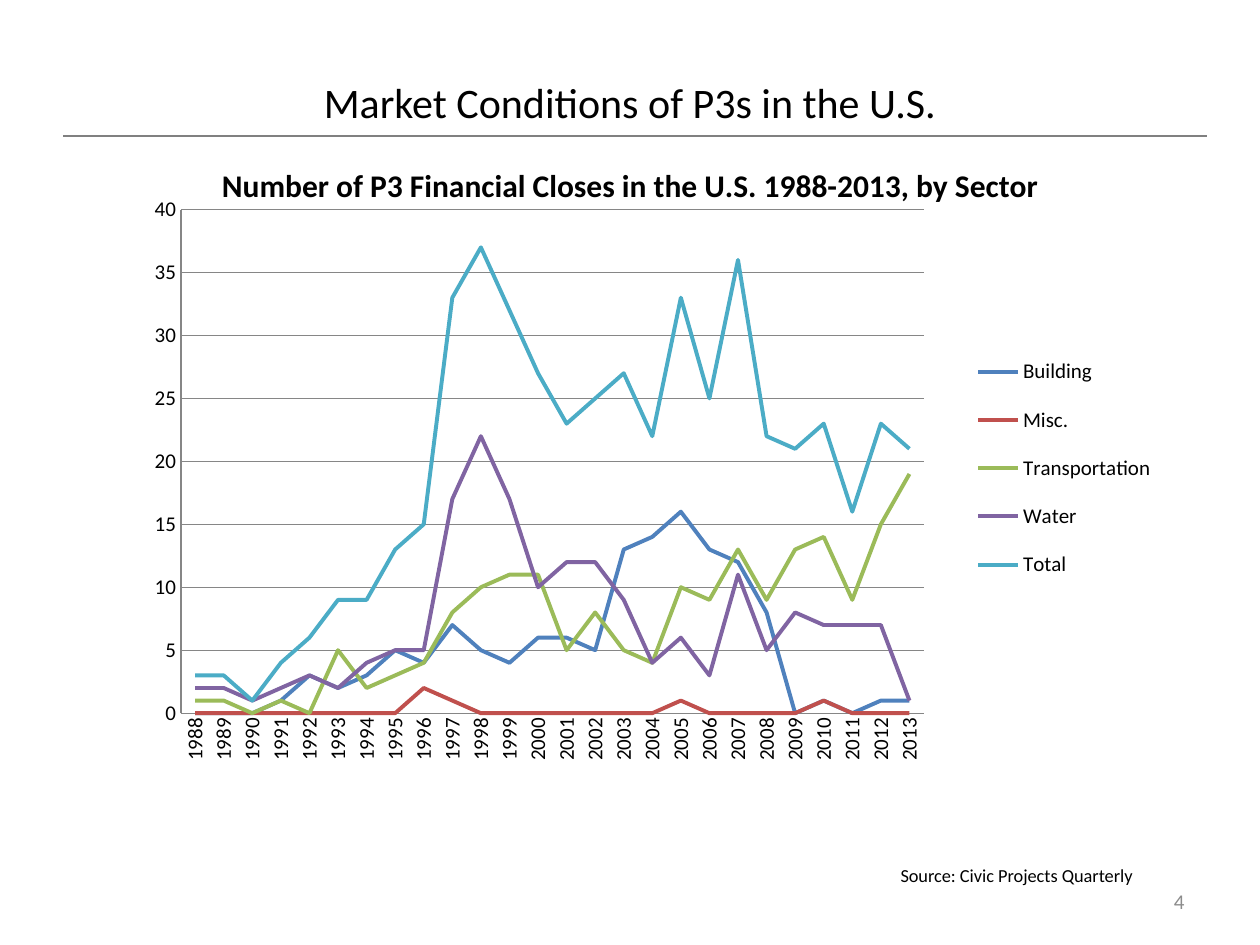
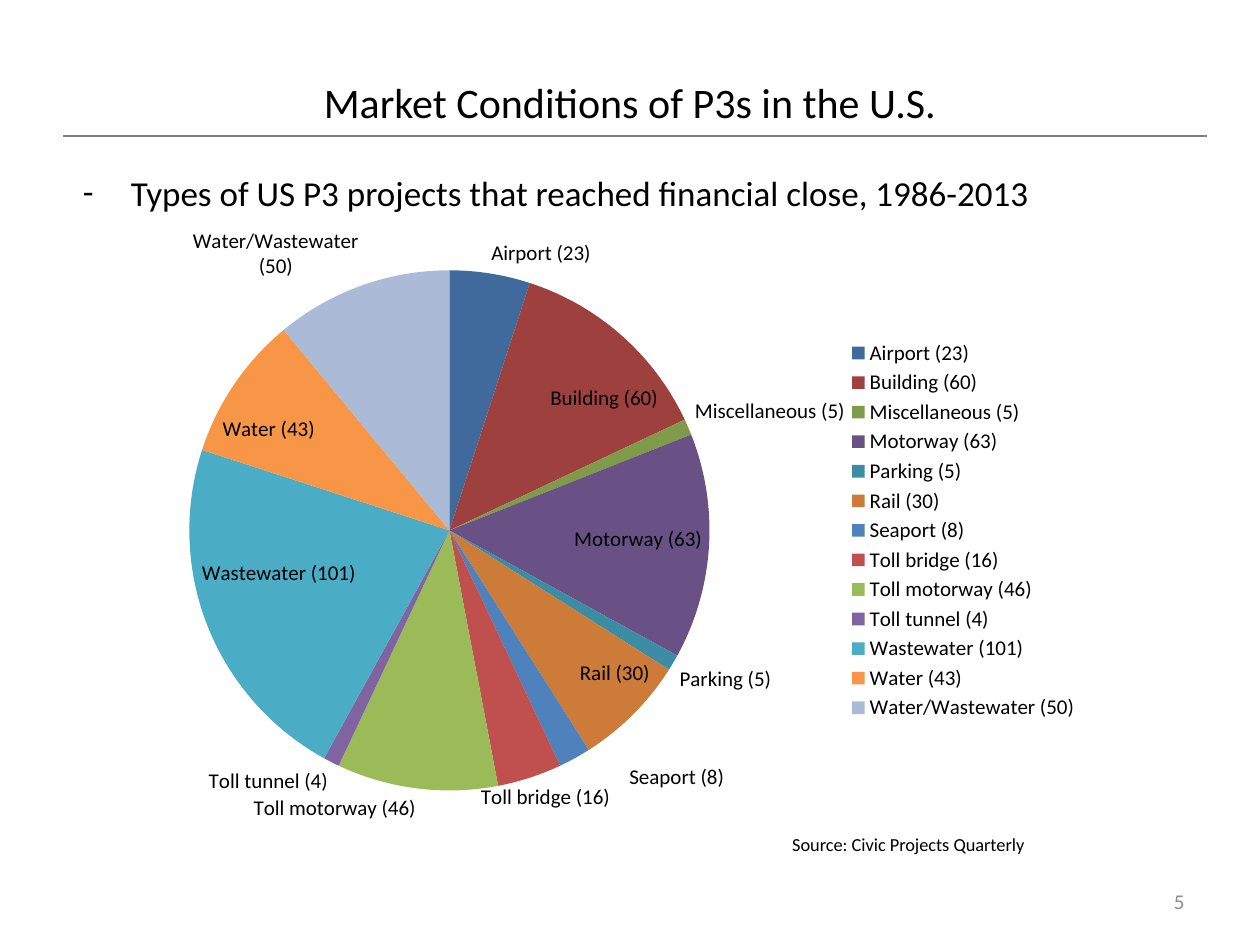
from lxml import etree
from pptx import Presentation
from pptx.chart.data import CategoryChartData as ChartData
from pptx.dml.color import RGBColor
from pptx.enum.chart import XL_CHART_TYPE as ChartType
from pptx.enum.chart import XL_LABEL_POSITION as LabelPos
from pptx.enum.chart import XL_LEGEND_POSITION as LegendPos
from pptx.enum.chart import XL_TICK_MARK as TickMark
from pptx.enum.shapes import MSO_CONNECTOR as Connector
from pptx.enum.text import MSO_ANCHOR as Anchor
from pptx.enum.text import PP_ALIGN as Align
from pptx.oxml.ns import qn
from pptx.util import Inches, Pt

COLORS = {
    "text": "000000", "rule": "808080", "number": "8C8C8C", "grid": "868686",
    "blue": "4F81BD", "red": "C0504D", "green": "9BBB59",
    "purple": "8064A2", "teal": "4BACC6", "orange": "F79646",
    "dark blue": "406A9C", "dark red": "9E413E", "dark green": "7F9A48",
    "dark purple": "695185", "dark teal": "3C8DA3", "dark orange": "CC7B38",
    "pale blue": "AABAD7",
}
BASE_COLORS = ["blue", "red", "green", "purple", "teal", "orange"]
SLICE_COLORS = [f"dark {name}" for name in BASE_COLORS] + BASE_COLORS + ["pale blue"]

TITLE = "Market Conditions of P3s in the U.S."
SOURCE = "Source: Civic Projects Quarterly"

YEARS = range(1988, 2014)
CLOSES = {
    "Building": [0, 0, 0, 1, 3, 2, 3, 5, 4, 7, 5, 4, 6,
                 6, 5, 13, 14, 16, 13, 12, 8, 0, 1, 0, 1, 1],
    "Misc.": [0, 0, 0, 0, 0, 0, 0, 0, 2, 1, 0, 0, 0,
              0, 0, 0, 0, 1, 0, 0, 0, 0, 1, 0, 0, 0],
    "Transportation": [1, 1, 0, 1, 0, 5, 2, 3, 4, 8, 10, 11, 11,
                       5, 8, 5, 4, 10, 9, 13, 9, 13, 14, 9, 15, 19],
    "Water": [2, 2, 1, 2, 3, 2, 4, 5, 5, 17, 22, 17, 10,
              12, 12, 9, 4, 6, 3, 11, 5, 8, 7, 7, 7, 1],
    "Total": [3, 3, 1, 4, 6, 9, 9, 13, 15, 33, 37, 32, 27,
              23, 25, 27, 22, 33, 25, 36, 22, 21, 23, 16, 23, 21],
}
PROJECTS = {
    "Airport": 23, "Building": 60, "Miscellaneous": 5, "Motorway": 63,
    "Parking": 5, "Rail": 30, "Seaport": 8, "Toll bridge": 16,
    "Toll motorway": 46, "Toll tunnel": 4, "Wastewater": 101, "Water": 43,
    "Water/Wastewater": 50,
}


def rgb(name):
    return RGBColor.from_string(COLORS[name])


def set_layout(element, index, inner=False, **fractions):
    """Give a chart part a manual layout in fractions of the chart."""
    for old in element.findall(qn("c:layout")):
        element.remove(old)
    layout = etree.Element(qn("c:layout"))
    manual = etree.SubElement(layout, qn("c:manualLayout"))
    settings = {"layoutTarget": "inner"} if inner else {}
    settings.update(xMode="edge", yMode="edge", **fractions)
    for tag, value in settings.items():
        etree.SubElement(manual, qn(f"c:{tag}")).set("val", str(value))
    element.insert(index, layout)


class DeckBuilder:
    """Holds the style and the current slide."""

    font = "Calibri"

    def __init__(self):
        self.deck = Presentation()
        self.deck.slide_width, self.deck.slide_height = Inches(10), Inches(7.5)
        self.page = None

    def format_font(self, font, size, color="text", bold=False):
        values = {"name": self.font, "size": Pt(size), "bold": bold}
        for name, value in values.items():
            setattr(font, name, value)
        font.color.rgb = rgb(color)

    def text(self, words, left, top, width, height, size, color="text",
             align=Align.LEFT, anchor=Anchor.TOP):
        box = self.page.shapes.add_textbox(
            Inches(left), Inches(top), Inches(width), Inches(height))
        frame = box.text_frame
        for name, value in {"word_wrap": True, "vertical_anchor": anchor}.items():
            setattr(frame, name, value)
        para = frame.paragraphs[0]
        para.alignment = align
        span = para.add_run()
        span.text = words
        self.format_font(span.font, size, color)
        return para

    def bullet(self, words, left, top, width, height):
        para = self.text(words, left, top, width, height, 20)
        para.space_before = Pt(4)
        props = para._p.get_or_add_pPr()
        props.set("marL", str(Inches(0.44)))
        props.set("indent", str(Inches(-0.38)))
        etree.SubElement(props, qn("a:buFont")).set("typeface", self.font)
        etree.SubElement(props, qn("a:buChar")).set("char", "-")

    def rule(self, left, top, right):
        line = self.page.shapes.add_connector(
            Connector.STRAIGHT, Inches(left), Inches(top), Inches(right), Inches(top))
        line.line.color.rgb = rgb("rule")
        line.line.width = Pt(1.25)
        etree.SubElement(line._element.spPr, qn("a:effectLst"))

    def new_page(self, number):
        """Add a slide with the shared title, rule and page number."""
        self.page = self.deck.slides.add_slide(self.deck.slide_layouts[6])
        self.text(TITLE, 0.5, 0.3, 9, 1.01, 24,
                  align=Align.CENTER, anchor=Anchor.MIDDLE)
        self.rule(0.5, 1.08, 9.58)
        self.text(str(number), 7.17, 6.95, 2.33, 0.4, 12, "number",
                  Align.RIGHT, Anchor.MIDDLE)

    def source(self, left, top, width):
        self.text(SOURCE, left, top, width, 0.28, 10.5, align=Align.RIGHT)

    def chart(self, kind, categories, series, at, plot, legend):
        data = ChartData()
        data.categories = categories
        for name, values in series.items():
            data.add_series(name, values)
        chart = self.page.shapes.add_chart(
            kind, *(Inches(length) for length in at), data).chart
        self.format_font(chart.font, 10)
        chart.has_title = False
        chart.has_legend = True
        chart.legend.position = LegendPos.RIGHT
        chart.legend.include_in_layout = False
        self.format_font(chart.legend.font, 12)
        set_layout(chart.legend._element, 1, **legend)
        set_layout(chart._chartSpace.chart.plotArea, 0, inner=True, **plot)
        return chart

    def line_chart(self, title, categories, series, **places):
        chart = self.chart(ChartType.LINE, categories, series, **places)
        # Chart title
        chart.has_title = True
        span = chart.chart_title.text_frame.paragraphs[0].add_run()
        span.text = title
        self.format_font(span.font, 18, bold=True)
        set_layout(chart.chart_title._element, 1, x=0.11, y=0.03)
        # Axes
        for axis in (chart.category_axis, chart.value_axis):
            axis.major_tick_mark = axis.minor_tick_mark = TickMark.NONE
            self.format_font(axis.tick_labels.font, 12)
            axis.format.line.color.rgb = rgb("grid")
        chart.category_axis._element.txPr.bodyPr.set("rot", "-5400000")
        scale = {"minimum_scale": 0, "maximum_scale": 40, "major_unit": 5,
                 "has_major_gridlines": True}
        for name, value in scale.items():
            setattr(chart.value_axis, name, value)
        chart.value_axis.major_gridlines.format.line.color.rgb = rgb("grid")
        # Lines
        chart.plots[0].vary_by_categories = False
        for line, color in zip(chart.plots[0].series, BASE_COLORS):
            line.smooth = False
            line.format.line.color.rgb = rgb(color)
            line.format.line.width = Pt(2.25)

    def pie_chart(self, categories, values, **places):
        chart = self.chart(ChartType.PIE, categories, {"Series 1": values}, **places)
        plot = chart.plots[0]
        plot.vary_by_categories = True
        # Slices
        for index, color in enumerate(SLICE_COLORS):
            fill = plot.series[0].points[index].format.fill
            fill.solid()
            fill.fore_color.rgb = rgb(color)
        # Labels without leader lines
        labels = plot.series[0].data_labels
        flags = {"show_category_name": True, "show_value": False,
                 "show_percentage": False, "position": LabelPos.BEST_FIT}
        for name, value in flags.items():
            setattr(labels, name, value)
        self.format_font(labels.font, 12)
        for leader in labels._element.findall(qn("c:showLeaderLines")):
            leader.set("val", "0")


def main():
    builder = DeckBuilder()

    # Closes by sector and year
    builder.new_page(4)
    builder.source(1.16, 6.81, 7.93)
    builder.line_chart(
        "Number of P3 Financial Closes in the U.S. 1988-2013, by Sector",
        YEARS, CLOSES, at=(0.78, 1.08, 8.52, 5.67),
        plot={"x": 0.077, "y": 0.103, "w": 0.692, "h": 0.705},
        legend={"x": 0.81, "y": 0.28, "w": 0.18, "h": 0.37})

    # Share of each project type, in percent
    builder.new_page(5)
    builder.bullet("Types of US P3 projects that reached financial close, 1986-2013",
                   0.5, 1.31, 9, 5.23)
    builder.source(1.25, 6.56, 6.98)
    total = sum(PROJECTS.values())
    builder.pie_chart(
        [f"{name} ({count})" for name, count in PROJECTS.items()],
        [round(100 * count / total) for count in PROJECTS.values()],
        at=(1.02, 1.72, 7.66, 4.98),
        plot={"x": 0.063, "y": 0.051, "w": 0.539, "h": 0.898},
        legend={"x": 0.74, "y": 0.19, "w": 0.25, "h": 0.62})

    builder.deck.save("out.pptx")


if __name__ == "__main__":
    main()
